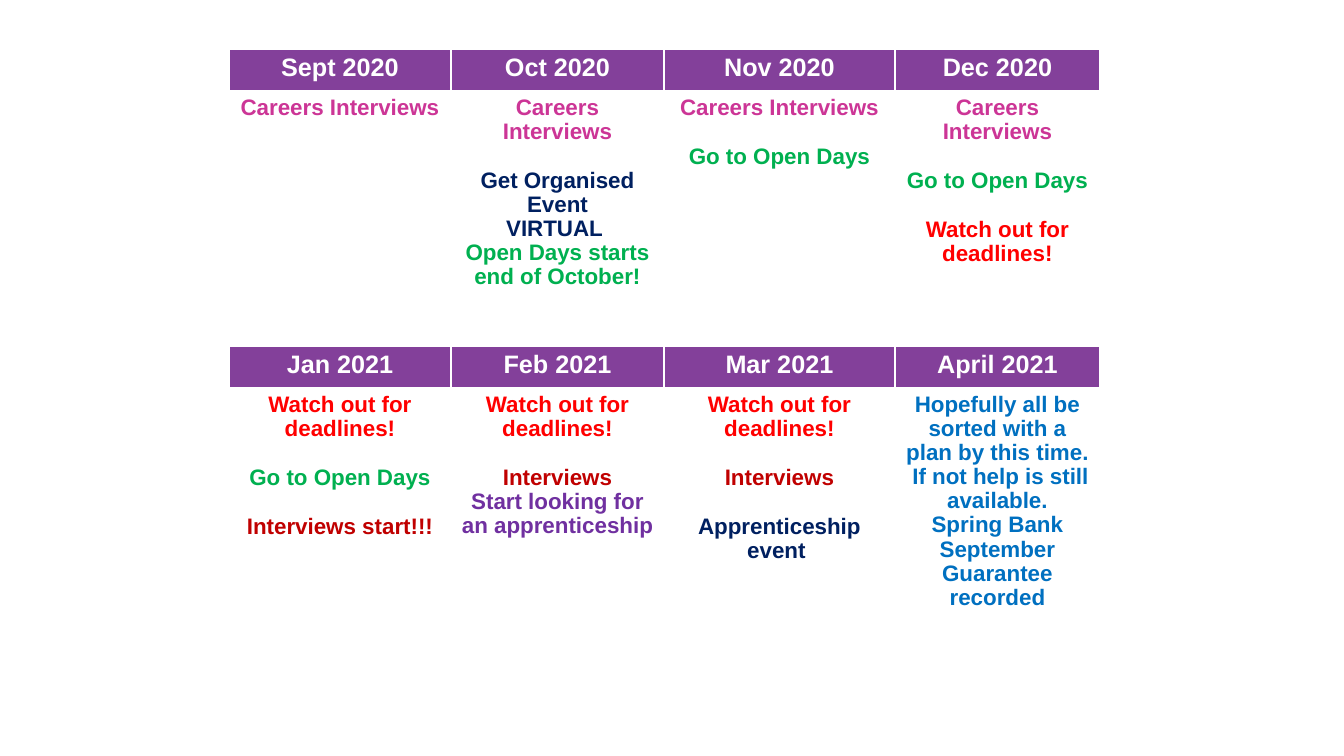
from lxml.etree import SubElement
from pptx import Presentation
from pptx.dml.color import RGBColor
from pptx.enum.text import PP_ALIGN as Align
from pptx.oxml.ns import qn
from pptx.util import Pt

EMU_PER_PX = 9071.43

WHITE = "FFFFFF"
PURPLE = "83409A"
PINK = "CC3596"
NAVY = "002060"
GREEN = "00B050"
RED = "FF0000"
DARK_RED = "C00000"
VIOLET = "7030A0"
BLUE = "0070C0"

CAREERS = ("Careers Interviews", PINK, False)
OPEN_DAYS = ("Go to Open Days", GREEN, True)
DEADLINES = "Watch out for deadlines!"
DEADLINES_FIRST = (DEADLINES, RED, False)
INTERVIEWS = ("Interviews", DARK_RED, True)

TERMS = [
    {
        "Sept 2020": [CAREERS],
        "Oct 2020": [
            CAREERS,
            ("Get Organised Event", NAVY, True),
            ("VIRTUAL ", NAVY, False),
            ("Open Days starts end of October!", GREEN, False),
        ],
        "Nov 2020": [CAREERS, OPEN_DAYS],
        "Dec 2020": [CAREERS, OPEN_DAYS, (DEADLINES, RED, True)],
    },
    {
        "Jan 2021": [DEADLINES_FIRST, OPEN_DAYS, ("Interviews start!!!", DARK_RED, True)],
        "Feb 2021": [
            DEADLINES_FIRST,
            INTERVIEWS,
            ("Start looking for an apprenticeship", VIOLET, False),
        ],
        "Mar 2021": [DEADLINES_FIRST, INTERVIEWS, ("Apprenticeship event ", NAVY, True)],
        "April 2021": [
            ("Hopefully all be sorted with a plan by this time.  If not help is still available.",
             BLUE, False),
            ("Spring Bank", BLUE, False),
            ("September Guarantee", BLUE, False),
            ("recorded", BLUE, False),
        ],
    },
]


def px(length):
    return round(length * EMU_PER_PX)


def color(hex_code):
    return RGBColor.from_string(hex_code)


class CalendarSlide:
    font = "Arial"
    month_size = 18
    event_size = 16
    line_spacing = 0.97
    event_gap = 17.75

    def __init__(self, presentation):
        self.slide = presentation.slides.add_slide(presentation.slide_layouts[6])

    def grid(self, left, top, widths, heights):
        frame = self.slide.shapes.add_table(
            len(heights), len(widths), px(left), px(top), px(sum(widths)), px(sum(heights)))
        calendar = frame.table
        calendar.first_row = calendar.horz_banding = False
        for column, width in zip(calendar.columns, widths):
            column.width = px(width)
        for row, height in zip(calendar.rows, heights):
            row.height = px(height)
        return calendar

    def borders(self, cell):
        properties = cell._tc.get_or_add_tcPr()
        for side in ("a:lnL", "a:lnR", "a:lnT", "a:lnB"):
            line = SubElement(properties, qn(side), w=str(Pt(1)))
            fill = SubElement(line, qn("a:solidFill"))
            SubElement(fill, qn("a:srgbClr"), val=WHITE)

    def paragraph(self, paragraph, size, hex_code):
        paragraph.alignment = Align.CENTER
        for run in paragraph.runs:
            run.font.name = self.font
            run.font.size = Pt(size)
            run.font.bold = True
            run.font.color.rgb = color(hex_code)

    def month(self, cell, name):
        self.borders(cell)
        cell.fill.solid()
        cell.fill.fore_color.rgb = color(PURPLE)
        cell.text_frame.text = name
        self.paragraph(cell.text_frame.paragraphs[0], self.month_size, WHITE)

    def events(self, cell, events):
        self.borders(cell)
        cell.fill.background()
        cell.text_frame.text = "\n".join(text for text, _, _ in events)
        for paragraph, (_, hex_code, spaced) in zip(cell.text_frame.paragraphs, events):
            self.paragraph(paragraph, self.event_size, hex_code)
            paragraph.line_spacing = self.line_spacing
            if spaced:
                paragraph.space_before = Pt(self.event_gap)


def main():
    presentation = Presentation()
    presentation.slide_width = px(1344)
    presentation.slide_height = px(756)
    slide = CalendarSlide(presentation)
    calendar = slide.grid(229, 49, [222, 213, 231, 205], [42, 255, 42, 265])
    for term_index, term in enumerate(TERMS):
        for column, (month, events) in enumerate(term.items()):
            slide.month(calendar.cell(2 * term_index, column), month)
            slide.events(calendar.cell(2 * term_index + 1, column), events)
    presentation.save("out.pptx")


if __name__ == "__main__":
    main()
